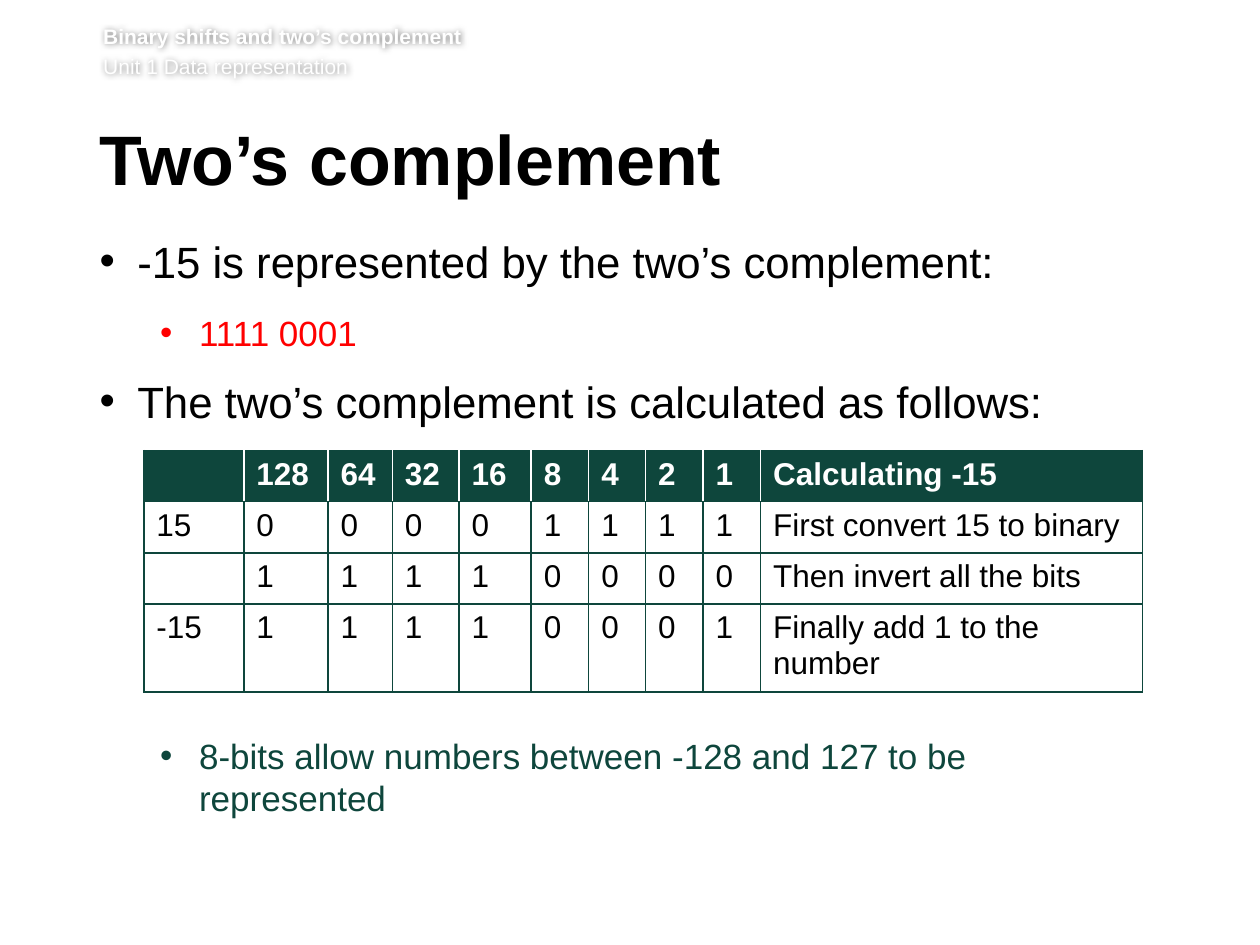
from dataclasses import dataclass

import lxml.etree
import pptx
import pptx.dml.color
import pptx.oxml
import pptx.oxml.ns
import pptx.util

Pt = pptx.util.Pt
COLOURS = {"green": "0E463C", "red": "FF0000", "black": "000000", "white": "FFFFFF"}
FONT = "Arial"


@dataclass
class Line:
    text: str
    size: float
    colour: str = "black"
    bold: bool = False
    before: float = 0
    after: float = 0
    spacing: float | None = None
    margin: float = 0
    hanging: float = 0
    level: int = 0


@dataclass
class Box:
    left: float
    top: float
    width: float
    height: float
    insets: tuple[float, float, float, float]


def add_element(parent, tag: str, **attributes: str):
    child = lxml.etree.SubElement(parent, pptx.oxml.ns.qn(tag))
    for key, value in attributes.items():
        child.set(key, value)
    return child


def style_font(font, size: float, colour: str, bold: bool) -> None:
    font.name = FONT
    font.size = Pt(size)
    font.bold = bold
    font.color.rgb = pptx.dml.color.RGBColor.from_string(COLOURS[colour])


def write_line(paragraph, line: Line) -> None:
    paragraph.text = line.text
    paragraph.level = line.level
    if line.hanging:
        properties = paragraph._p.get_or_add_pPr()
        properties.set("marL", str(Pt(line.margin)))
        properties.set("indent", str(-Pt(line.hanging)))
        add_element(properties, "a:buFont", typeface=FONT)
        add_element(properties, "a:buChar", char="•")
    if line.before:
        paragraph.space_before = Pt(line.before)
    if line.after:
        paragraph.space_after = Pt(line.after)
    if line.spacing:
        paragraph.line_spacing = Pt(line.spacing)
    style_font(paragraph.font, line.size, line.colour, line.bold)


def add_text(slide, box: Box, lines: list[Line]):
    shape = slide.shapes.add_textbox(Pt(box.left), Pt(box.top), Pt(box.width), Pt(box.height))
    frame = shape.text_frame
    frame.word_wrap = True
    frame.margin_left, frame.margin_top, frame.margin_right, frame.margin_bottom = map(Pt, box.insets)
    for index, line in enumerate(lines):
        write_line(frame.add_paragraph() if index else frame.paragraphs[0], line)
    return shape


def add_soft_shadow(shape) -> None:
    effects = add_element(shape._element.spPr, "a:effectLst")
    shadow = add_element(effects, "a:outerShdw", blurRad=str(Pt(4)), dist="0", dir="0",
                         algn="ctr", rotWithShape="0")
    colour = add_element(shadow, "a:srgbClr", val=COLOURS["black"])
    add_element(colour, "a:alpha", val="50000")


def set_borders(cell, left: str, right: str) -> None:
    properties = cell._tc.get_or_add_tcPr()
    sides = {"a:lnL": left, "a:lnR": right, "a:lnT": "green", "a:lnB": "green"}
    for tag, colour in sides.items():
        border = add_element(properties, tag, w=str(Pt(1)))
        add_element(add_element(border, "a:solidFill"), "a:srgbClr", val=COLOURS[colour])


def add_bit_table(slide, box: Box, widths: list[float], rows: list[list[str]]) -> None:
    table = slide.shapes.add_table(len(rows), len(widths), Pt(box.left), Pt(box.top),
                                   Pt(box.width), Pt(box.height)).table
    table.horz_banding = False
    for column, width in zip(table.columns, widths):
        column.width = Pt(width)
    last = len(widths) - 1
    for row_index, values in enumerate(rows):
        table.rows[row_index].height = Pt(box.height / len(rows))
        header = row_index == 0
        divider = "white" if header else "green"
        for column_index, value in enumerate(values):
            cell = table.cell(row_index, column_index)
            set_borders(cell, divider if column_index else "green",
                        divider if column_index < last else "green")
            if header:
                cell.fill.solid()
                cell.fill.fore_color.rgb = pptx.dml.color.RGBColor.from_string(COLOURS["green"])
            else:
                cell.fill.background()
            write_line(cell.text_frame.paragraphs[0],
                       Line(value, 18, "white" if header else "black", header))


def main_point(text: str) -> Line:
    return Line(text, 25, after=14, spacing=30, margin=21.6, hanging=21.6)


def sub_point(text: str, colour: str, before: float = 0) -> Line:
    return Line(text, 20, colour, before=before, after=12, spacing=24,
                margin=56.9, hanging=22.3, level=1)


def main() -> None:
    deck = pptx.Presentation()
    deck.slide_width, deck.slide_height = Pt(720), Pt(540)
    slide = deck.slides.add_slide(deck.slide_layouts[6])

    running_header = add_text(slide, Box(59, 13.2, 635, 35.3, (0, 0, 0, 3.6)), [
        Line("Binary shifts and two’s complement", 12, "white", True),
        Line("Unit 1 Data representation", 12, "white", before=2.9),
    ])
    add_soft_shadow(running_header)

    add_text(slide, Box(56.9, 71.3, 615.6, 52.6, (0, 3.6, 7.2, 3.6)),
             [Line("Two’s complement", 40, bold=True, spacing=39)])

    add_text(slide, Box(56.9, 133.9, 614.2, 341.3, (0, 0, 7.2, 3.6)), [
        main_point("-15 is represented by the two’s complement:"),
        sub_point("1111 0001", "red"),
        main_point("The two’s complement is calculated as follows:"),
        sub_point("8-bits allow numbers between -128 and 127 to be represented", "green", 162),
    ])

    widths = [57.1, 48.2, 36.7, 38.2, 41.2, 32.9, 32.4, 32.9, 32.9, 218.4]
    add_bit_table(slide, Box(82.2, 257.5, sum(widths), 116.8, (0, 0, 0, 0)), widths, [
        ["", *(str(2 ** power) for power in range(7, -1, -1)), "Calculating -15"],
        ["15", *"00001111", "First convert 15 to binary"],
        ["", *"11110000", "Then invert all the bits"],
        ["-15", *"11110001", "Finally add 1 to the number"],
    ])

    deck.save("out.pptx")


if __name__ == "__main__":
    main()
